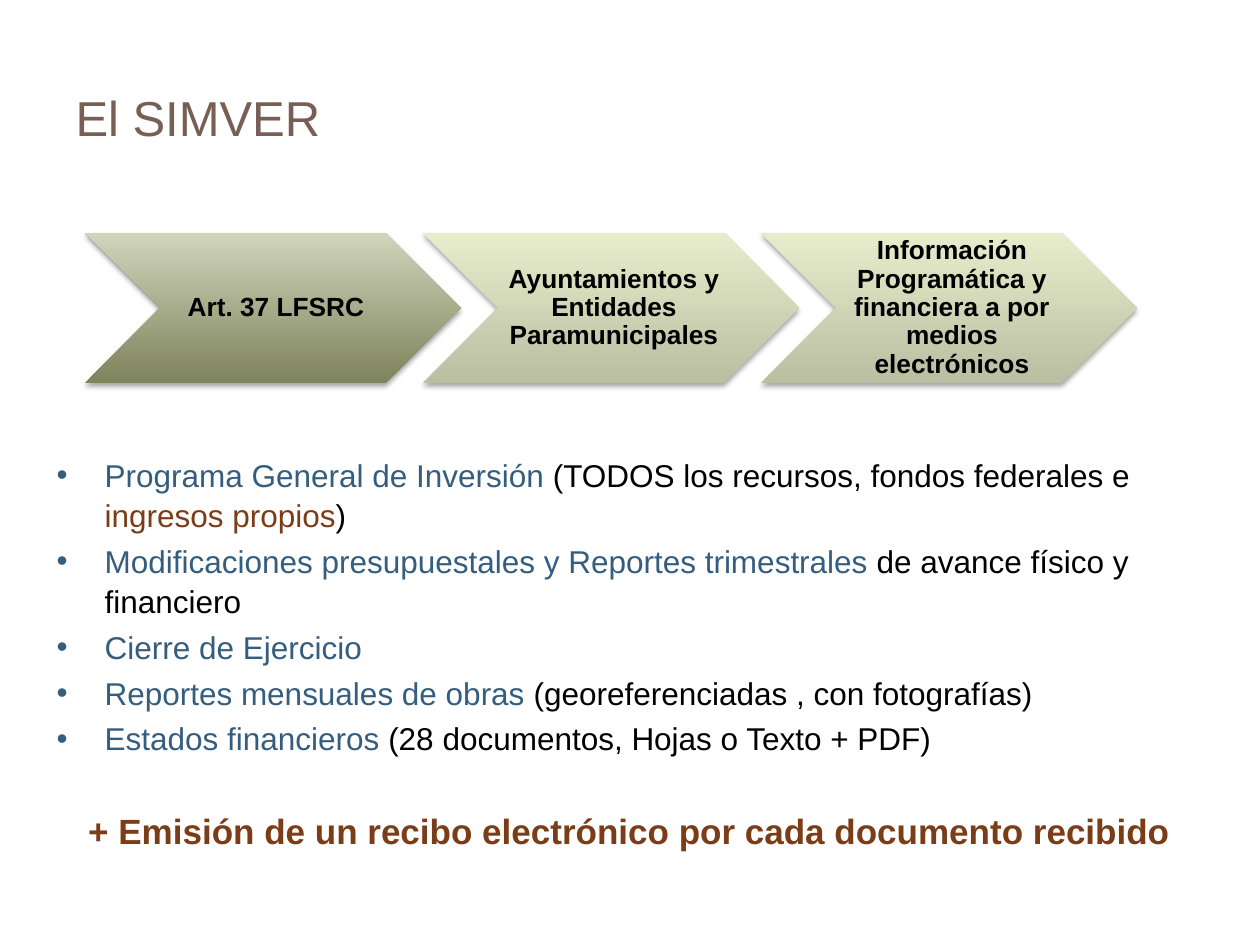
from lxml.etree import SubElement
from pptx import Presentation
from pptx.dml.color import RGBColor
from pptx.enum.shapes import MSO_SHAPE
from pptx.enum.text import MSO_ANCHOR, MSO_AUTO_SIZE, PP_ALIGN
from pptx.oxml.ns import qn
from pptx.util import Emu, Pt

PX = 914400 // 126
FONT = "Arial"
COLORS = {
    "title": "775F55", "text": "000000", "blue": "355D7E", "brown": "7B3D17",
    "olive_dark": "7D835B", "olive_light": "D1D5BC",
    "pale_dark": "BBBFA1", "pale_light": "E7ECCD",
}

TITLE = "El SIMVER"
STEPS = [
    ("Art. 37 LFSRC", "olive"),
    ("Ayuntamientos y Entidades Paramunicipales", "pale"),
    ("Información Programática y financiera a por medios electrónicos", "pale"),
]
BULLETS = [
    [("Programa General de Inversión ", "blue"),
     ("(TODOS los recursos, fondos federales e ", "text"),
     ("ingresos propios", "brown"), (")", "text")],
    [("Modificaciones presupuestales y Reportes trimestrales ", "blue"),
     ("de avance físico y financiero", "text")],
    [("Cierre de Ejercicio", "blue")],
    [("Reportes mensuales de obras ", "blue"),
     ("(georeferenciadas , con fotografías)", "text")],
    [("Estados financieros ", "blue"),
     ("(28 documentos, Hojas o Texto + PDF)", "text")],
]
CLOSING = "+ Emisión de un recibo electrónico por cada documento recibido"

STEP_LEFT, STEP_TOP, STEP_W, STEP_H, STEP_PITCH = 85, 233, 376, 150, 338
BULLET_INDENT = 48


def px(n):
    return Emu(n * PX)


def rgb(name):
    return RGBColor.from_string(COLORS[name])


def place(sp, left, top, width, height):
    sp.left, sp.top, sp.width, sp.height = map(px, (left, top, width, height))


def style(r, size, color, bold=False):
    r.font.name, r.font.size, r.font.bold = FONT, Pt(size), bold
    r.font.color.rgb = rgb(color)


def set_bullet(p, char=None):
    """Hang the paragraph on a bullet, or clear bullet and indent."""
    pPr = p._p.get_or_add_pPr()
    indent = px(BULLET_INDENT) if char else 0
    pPr.set("marL", str(indent))
    pPr.set("indent", str(-indent))
    if char:
        SubElement(pPr, qn("a:buFont"), typeface=FONT)
        SubElement(pPr, qn("a:buChar"), char=char)
    else:
        SubElement(pPr, qn("a:buNone"))


def add_soft_shadow(sp):
    sp.shadow.inherit = False
    effects = sp._element.spPr.find(qn("a:effectLst"))
    shadow = SubElement(effects, qn("a:outerShdw"), blurRad=str(Pt(3.1)),
                        dist=str(Pt(1.8)), dir="5400000", rotWithShape="0")
    color = SubElement(shadow, qn("a:srgbClr"), val=COLORS["text"])
    SubElement(color, qn("a:alpha"), val="35000")


def add_step(slide, index, text, tone):
    sp = slide.shapes.add_shape(MSO_SHAPE.CHEVRON, 0, 0, 0, 0)
    place(sp, STEP_LEFT + index * STEP_PITCH, STEP_TOP, STEP_W, STEP_H)
    sp.line.fill.background()
    sp.fill.gradient()
    sp.fill.gradient_angle = 90
    for stop, position, shade in zip(sp.fill.gradient_stops, (0, 1), ("dark", "light")):
        stop.position = position
        stop.color.rgb = rgb(f"{tone}_{shade}")
    add_soft_shadow(sp)

    tf = sp.text_frame
    tf.word_wrap = True
    tf.vertical_anchor = MSO_ANCHOR.MIDDLE
    tf.margin_left = px(9)
    tf.margin_right = tf.margin_top = tf.margin_bottom = px(3)
    tf.text = text
    p = tf.paragraphs[0]
    p.alignment, p.line_spacing = PP_ALIGN.CENTER, 0.9
    style(p.runs[0], 15, "text", bold=True)


def fill_title(sp):
    place(sp, 63, 38, 775, 158)
    tf = sp.text_frame
    tf.text = TITLE
    tf.vertical_anchor = MSO_ANCHOR.MIDDLE
    tf.paragraphs[0].alignment = PP_ALIGN.LEFT
    style(tf.paragraphs[0].runs[0], 28, "title")


def fill_body(sp):
    place(sp, 44, 448, 1171, 396)
    tf = sp.text_frame
    tf.auto_size = MSO_AUTO_SIZE.NONE
    for i, parts in enumerate(BULLETS):
        p = tf.add_paragraph() if i else tf.paragraphs[0]
        set_bullet(p, "•")
        p.line_spacing = 1.05
        p.space_before = Pt(3.6 if i else 0)
        for text, color in parts:
            r = p.add_run()
            r.text = text
            style(r, 18, color)

    p = tf.add_paragraph()
    set_bullet(p)
    p.text = CLOSING
    p.alignment, p.space_before = PP_ALIGN.CENTER, Pt(30)
    style(p.runs[0], 20, "brown", bold=True)


def main():
    prs = Presentation()
    prs.slide_width, prs.slide_height = px(1260), px(945)
    slide = prs.slides.add_slide(prs.slide_layouts[1])
    fill_title(slide.shapes.title)
    fill_body(slide.placeholders[1])
    for i, (text, tone) in enumerate(STEPS):
        add_step(slide, i, text, tone)
    prs.save("out.pptx")


if __name__ == "__main__":
    main()
